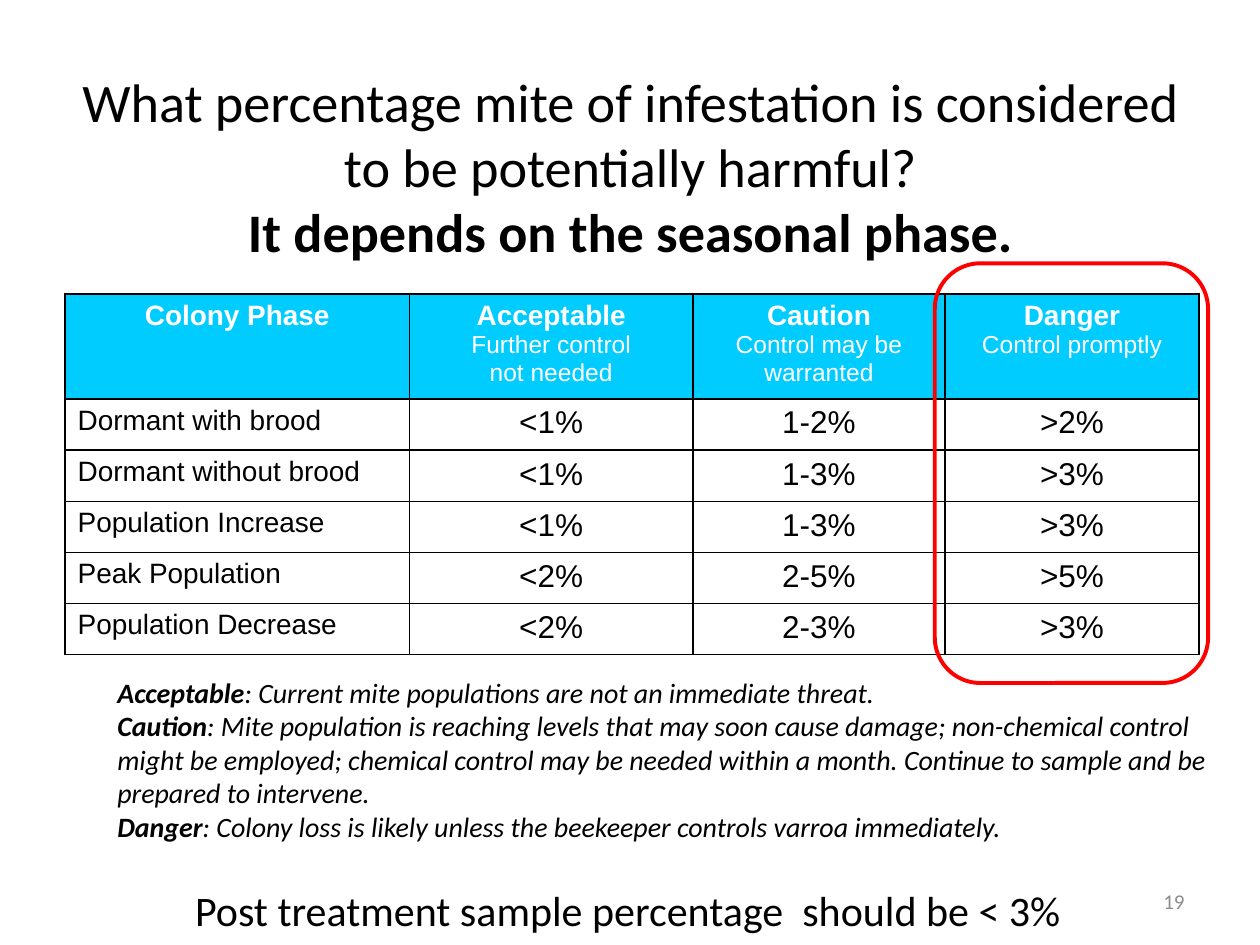
from dataclasses import dataclass

from lxml.etree import SubElement
from pptx import Presentation
from pptx.dml.color import RGBColor
from pptx.enum.shapes import MSO_SHAPE
from pptx.enum.text import MSO_ANCHOR, MSO_AUTO_SIZE, PP_ALIGN
from pptx.oxml.ns import qn
from pptx.util import Pt


@dataclass(frozen=True)
class Theme:
    black: str = "000000"
    white: str = "FFFFFF"
    grey: str = "8C8C8C"
    red: str = "FF0000"
    header: str = "00CCFF"
    title_size: int = 31
    note_size: int = 24
    value_size: int = 18
    label_size: int = 16
    hint_size: int = 14
    number_size: int = 12
    body_font: str = "Calibri"
    table_font: str = "Arial"


T = Theme()

# A paragraph is a list of (text, bold) runs.
TITLE = [
    [("What percentage mite of infestation is considered to be potentially harmful?", False)],
    [("It depends on the seasonal phase.", True)],
]
HEADERS = [
    ("Colony Phase", []),
    ("Acceptable", ["Further control", "not needed"]),
    ("Caution", ["Control may be warranted"]),
    ("Danger", ["Control promptly"]),
]
PHASES = [
    ("Dormant with brood", "<1%", "1-2%", ">2%"),
    ("Dormant without brood", "<1%", "1-3%", ">3%"),
    ("Population Increase", "<1%", "1-3%", ">3%"),
    ("Peak Population", "<2%", "2-5%", ">5%"),
    ("Population Decrease", "<2%", "2-3%", ">3%"),
]
DEFINITIONS = [
    ("Acceptable", "Current mite populations are not an immediate threat."),
    ("Caution", "Mite population is reaching levels that may soon cause damage; "
                "non-chemical control might be employed; chemical control may be needed "
                "within a month. Continue to sample and be prepared to intervene."),
    ("Danger", "Colony loss is likely unless the beekeeper controls varroa immediately."),
]
POST_TREATMENT = "Post treatment sample percentage  should be < 3%"
SLIDE_NUMBER = "19"

COL_WIDTHS = [196.8, 162, 144, 145.2]
HEADER_HEIGHT, ROW_HEIGHT = 60, 29.2
TABLE_LEFT, TABLE_TOP = 37.2, 168


def rgb(value):
    return RGBColor.from_string(value)


def write(p, text, *, size, font=T.body_font, color=T.black,
          bold=False, italic=False, align=PP_ALIGN.LEFT):
    """Append one formatted run to a paragraph."""
    p.alignment = align
    r = p.add_run()
    r.text = text
    f = r.font
    f.name, f.size, f.bold, f.italic = font, Pt(size), bold, italic
    f.color.rgb = rgb(color)


def fill_paragraphs(tf, paragraphs, **fmt):
    for i, runs in enumerate(paragraphs):
        p = tf.add_paragraph() if i else tf.paragraphs[0]
        for text, bold in runs:
            write(p, text, bold=bold, **fmt)


def place(sp, left, top, width, height):
    sp.left, sp.top, sp.width, sp.height = map(Pt, (left, top, width, height))


def add_text(slide, box, paragraphs, *, wrap=True, anchor=MSO_ANCHOR.TOP, **fmt):
    sp = slide.shapes.add_textbox(*map(Pt, box))
    tf = sp.text_frame
    tf.word_wrap, tf.vertical_anchor = wrap, anchor
    fill_paragraphs(tf, paragraphs, **fmt)


def style_cell(cell, fill=None):
    """Draw thin black borders and set the fill, or none."""
    tc_pr = cell._tc.get_or_add_tcPr()
    for side in ("lnL", "lnR", "lnT", "lnB"):
        ln = SubElement(tc_pr, qn(f"a:{side}"), w=str(Pt(1)))
        SubElement(SubElement(ln, qn("a:solidFill")), qn("a:srgbClr"), val=T.black)
    if fill:
        cell.fill.solid()
        cell.fill.fore_color.rgb = rgb(fill)
    else:
        cell.fill.background()


def add_phase_table(slide):
    heights = [HEADER_HEIGHT] + [ROW_HEIGHT] * len(PHASES)
    frame = slide.shapes.add_table(
        len(heights), len(COL_WIDTHS), Pt(TABLE_LEFT), Pt(TABLE_TOP),
        Pt(sum(COL_WIDTHS)), Pt(sum(heights)))
    table = frame.table
    table.first_row = table.horz_banding = False
    for col, width in zip(table.columns, COL_WIDTHS):
        col.width = Pt(width)
    for row, height in zip(table.rows, heights):
        row.height = Pt(height)

    for c, (name, hints) in enumerate(HEADERS):
        cell = table.cell(0, c)
        style_cell(cell, T.header)
        fmt = dict(font=T.table_font, color=T.white, align=PP_ALIGN.CENTER)
        tf = cell.text_frame
        write(tf.paragraphs[0], name, size=T.label_size, bold=True, **fmt)
        for hint in hints:
            write(tf.add_paragraph(), hint, size=T.hint_size, **fmt)

    for r, values in enumerate(PHASES, start=1):
        for c, text in enumerate(values):
            cell = table.cell(r, c)
            style_cell(cell)
            write(cell.text_frame.paragraphs[0], text, font=T.table_font,
                  size=T.value_size if c else T.label_size,
                  align=PP_ALIGN.CENTER if c else PP_ALIGN.LEFT)


def add_danger_outline(slide):
    sp = slide.shapes.add_shape(MSO_SHAPE.ROUNDED_RECTANGLE,
                                Pt(534.2), Pt(150.5), Pt(156.2), Pt(239.8))
    sp.shadow.inherit = False
    sp.fill.background()
    sp.line.color.rgb = rgb(T.red)
    sp.line.width = Pt(2.25)


def main():
    prs = Presentation()
    prs.slide_width, prs.slide_height = Pt(720), Pt(540)
    slide = prs.slides.add_slide(prs.slide_layouts[5])

    title = slide.shapes.title
    place(title, 36, 21.6, 648, 146)
    tf = title.text_frame
    tf.word_wrap, tf.auto_size = True, MSO_AUTO_SIZE.NONE
    tf.vertical_anchor = MSO_ANCHOR.MIDDLE
    fill_paragraphs(tf, TITLE, size=T.title_size, align=PP_ALIGN.CENTER)

    add_text(slide, (516, 500.5, 168, 28.8), [[(SLIDE_NUMBER, False)]],
             anchor=MSO_ANCHOR.MIDDLE, size=T.number_size, color=T.grey,
             align=PP_ALIGN.RIGHT)
    add_text(slide, (104.4, 502, 513.4, 36), [[(POST_TREATMENT, False)]],
             wrap=False, size=T.note_size)
    add_phase_table(slide)
    add_text(slide, (60, 382.3, 648, 106.6),
             [[(term, True), (f": {meaning}", False)] for term, meaning in DEFINITIONS],
             size=T.label_size, italic=True)
    add_danger_outline(slide)
    prs.save("out.pptx")


if __name__ == "__main__":
    main()
